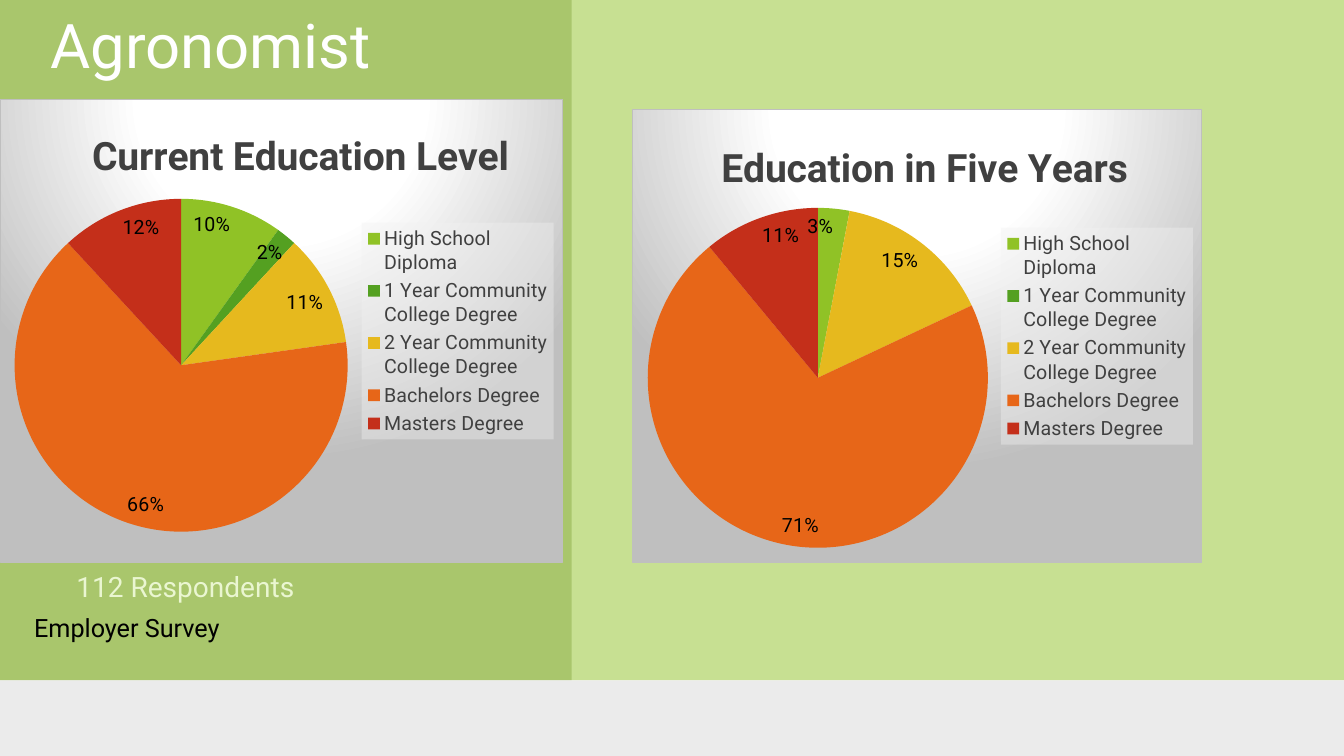
from lxml.etree import SubElement
from pptx import Presentation
from pptx.chart.data import CategoryChartData
from pptx.dml.color import RGBColor
from pptx.enum.chart import XL_CHART_TYPE, XL_LABEL_POSITION, XL_LEGEND_POSITION
from pptx.enum.shapes import MSO_SHAPE
from pptx.enum.text import MSO_ANCHOR, PP_ALIGN
from pptx.oxml import parse_xml
from pptx.oxml.ns import nsdecls, qn
from pptx.util import Inches, Pt

FONT = "Roboto"
WHITE = RGBColor(0xFF, 0xFF, 0xFF)
BLACK = RGBColor(0, 0, 0)
PALE_GREEN = RGBColor(0xEA, 0xF6, 0xD1)
DARK_GREY = RGBColor(0x40, 0x40, 0x40)
LIME = RGBColor(0x90, 0xC2, 0x26)
OLIVE = RGBColor(0x6C, 0x92, 0x1D)
FOOTER_GREY = RGBColor(0xEB, 0xEB, 0xEB)
DEGREE_COLOURS = [LIME, RGBColor(0x54, 0xA0, 0x21), RGBColor(0xE6, 0xB9, 0x1E),
                  RGBColor(0xE7, 0x66, 0x18), RGBColor(0xC4, 0x2F, 0x1A)]

DEGREES = ["High School Diploma", "1 Year Community College Degree",
           "2 Year Community College Degree", "Bachelors Degree", "Masters Degree"]
PANELS = [
    ((0, 0, 13.33, 6.75), LIME, 50),
    ((0, 0, 5.67, 6.75), OLIVE, 32),
    ((0, 6.75, 13.33, 0.75), FOOTER_GREY, 100),
]
SURVEYS = [
    {"title": "Current Education Level", "shares": [10, 2, 11, 66, 12],
     "box": (0, 0.98, 5.58, 4.61), "title_at": (0.84, 0.24), "pie": (0.14, 0.99, 3.31)},
    {"title": "Education in Five Years", "shares": [3, 0, 15, 71, 11],
     "box": (6.27, 1.08, 5.65, 4.51), "title_at": (0.81, 0.26), "pie": (0.15, 0.98, 3.38)},
]
HEADING = ("Agronomist", (0.4, 0.16, 4.58, 0.94), 44, WHITE)
CAPTIONS = [
    ("112 Respondents", (0.66, 5.6, 4.6, 1.08), 20, PALE_GREEN),
    ("Employer Survey", (0.24, 6.03, 2.72, 0.4), 18, BLACK),
]


def inches(box):
    """Turn a box of numbers into lengths."""
    return [Inches(length) for length in box]


def style_font(font, size, colour, bold=False):
    """Set face, size, colour and weight."""
    font.name, font.size, font.bold = FONT, Pt(size), bold
    font.color.rgb = colour


def write(shape, text, size, colour):
    """Fill a text shape with one left-aligned, top-anchored run."""
    frame = shape.text_frame
    frame.word_wrap = True
    frame.vertical_anchor = MSO_ANCHOR.TOP
    paragraph = frame.paragraphs[0]
    paragraph.alignment = PP_ALIGN.LEFT
    run = paragraph.add_run()
    run.text = text
    style_font(run.font, size, colour)
    return paragraph


def set_alpha(fill_element, percent):
    """Make the colour of a solid fill partly transparent."""
    SubElement(fill_element[0], qn("a:alpha")).set("val", str(percent * 1000))


def add_panel(slide, box, colour, opacity):
    """Add one background panel."""
    panel = slide.shapes.add_shape(MSO_SHAPE.RECTANGLE, *inches(box))
    panel.shadow.inherit = False
    panel.fill.solid()
    panel.fill.fore_color.rgb = colour
    panel.line.fill.background()
    if opacity < 100:
        set_alpha(panel._element.spPr.find(qn("a:solidFill")), opacity)


def place(parent, index, **fractions):
    """Give a chart part a manual layout."""
    old = parent.find(qn("c:layout"))
    if old is not None:
        parent.remove(old)
    layout = parse_xml(f"<c:layout {nsdecls('c')}><c:manualLayout/></c:layout>")
    manual = layout[0]
    if "w" in fractions:
        SubElement(manual, qn("c:layoutTarget")).set("val", "inner")
    for mode in ("xMode", "yMode"):
        SubElement(manual, qn(f"c:{mode}")).set("val", "edge")
    for name, value in fractions.items():
        SubElement(manual, qn(f"c:{name}")).set("val", f"{value:.4f}")
    parent.insert(index, layout)


def chart_background():
    """Build the radial grey fill and thin border of a chart."""
    return parse_xml(
        f"<c:spPr {nsdecls('c', 'a')}><a:gradFill><a:gsLst>"
        '<a:gs pos="0"><a:srgbClr val="FFFFFF"/></a:gs>'
        '<a:gs pos="39000"><a:srgbClr val="FFFFFF"/></a:gs>'
        '<a:gs pos="100000"><a:srgbClr val="BFBFBF"/></a:gs></a:gsLst>'
        '<a:path path="circle"><a:fillToRect l="50000" t="-80000" r="50000" b="180000"/></a:path>'
        '</a:gradFill><a:ln w="9525"><a:solidFill><a:srgbClr val="BFBFBF"/></a:solidFill></a:ln>'
        "</c:spPr>")


def legend_background():
    """Build the translucent fill of a legend."""
    return parse_xml(
        f"<c:spPr {nsdecls('c', 'a')}><a:solidFill><a:srgbClr val=\"F2F2F2\">"
        '<a:alpha val="39000"/></a:srgbClr></a:solidFill><a:ln><a:noFill/></a:ln></c:spPr>')


def add_survey(slide, survey):
    """Add one pie chart of education levels."""
    data = CategoryChartData()
    data.categories = DEGREES
    data.add_series("Series 1", survey["shares"])
    box = survey["box"]
    chart = slide.shapes.add_chart(XL_CHART_TYPE.PIE, *inches(box), data).chart
    width, height = box[2:]
    style_font(chart.font, 10, BLACK)

    chart.has_title = True
    run = chart.chart_title.text_frame.paragraphs[0].add_run()
    run.text = survey["title"]
    style_font(run.font, 28, DARK_GREY, bold=True)
    chart.chart_title.include_in_layout = False
    left, top = survey["title_at"]
    place(chart.chart_title._element, 1, x=left / width, y=top / height)

    chart.has_legend = True
    legend = chart.legend
    legend.position = XL_LEGEND_POSITION.RIGHT
    legend.include_in_layout = False
    style_font(legend.font, 14, DARK_GREY)
    legend._element.find(qn("c:txPr")).addprevious(legend_background())

    plot = chart.plots[0]
    plot.vary_by_categories = True
    for index, colour in enumerate(DEGREE_COLOURS):
        fill = plot.series[0].points[index].format.fill
        fill.solid()
        fill.fore_color.rgb = colour
    plot.has_data_labels = True
    labels = plot.data_labels
    labels.show_percentage = False
    labels.show_value = True
    labels.number_format = '0"%";;'
    labels.number_format_is_linked = False
    labels.position = XL_LABEL_POSITION.INSIDE_END
    style_font(labels.font, 14, BLACK)

    left, top, diameter = survey["pie"]
    place(chart._chartSpace.chart.plotArea, 0, x=left / width, y=top / height,
          w=diameter / width, h=diameter / height)
    chart._chartSpace.chart.addnext(chart_background())


def main():
    """Build the Agronomist education slide."""
    deck = Presentation()
    deck.slide_width, deck.slide_height = Inches(13.33), Inches(7.5)
    slide = deck.slides.add_slide(deck.slide_layouts[5])
    for panel in PANELS:
        add_panel(slide, *panel)

    text, box, size, colour = HEADING
    title = slide.shapes.title
    title.left, title.top, title.width, title.height = inches(box)
    write(title, text, size, colour).line_spacing = 0.8
    slide.shapes._spTree.append(title._element)

    for survey in SURVEYS:
        add_survey(slide, survey)
    for text, box, size, colour in CAPTIONS:
        write(slide.shapes.add_textbox(*inches(box)), text, size, colour)
    deck.save("out.pptx")


if __name__ == "__main__":
    main()
